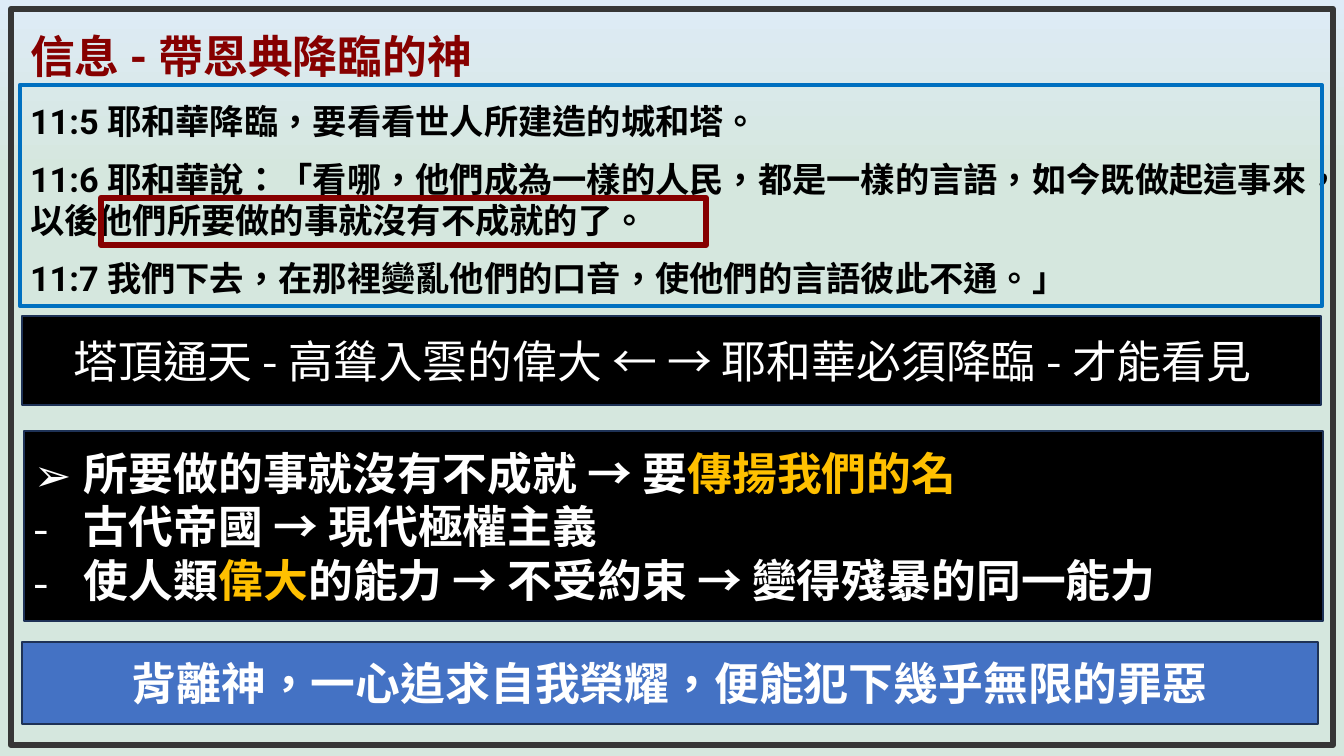
from lxml.etree import SubElement
from pptx import Presentation
from pptx.dml.color import RGBColor
from pptx.enum.shapes import MSO_SHAPE
from pptx.enum.text import MSO_ANCHOR, MSO_AUTO_SIZE, PP_ALIGN
from pptx.oxml.ns import qn
from pptx.util import Emu, Pt

CJK, LATIN = "Noto Sans CJK SC", "Roboto"
WHITE, BLACK, GOLD, MAROON = "FFFFFF", "000000", "FFC000", "860000"
BLUE, EDGE = "4472C4", "1E3256"
TITLE = "信息 - 帶恩典降臨的神"
VERSES = [
    "11:5 耶和華降臨，要看看世人所建造的城和塔。",
    "11:6 耶和華說：「看哪，他們成為一樣的人民，都是一樣的言語，如今既做起這事來，以後他們所要做的事就沒有不成就的了。",
    "11:7 我們下去，在那裡變亂他們的口音，使他們的言語彼此不通。」",
]
CONTRAST = "塔頂通天 - 高聳入雲的偉大 ← → 耶和華必須降臨 - 才能看見"
POINTS = [
    ("➢", [("所要做的事就沒有不成就 → 要", WHITE), ("傳揚我們的名", GOLD)]),
    ("-", [("古代帝國 → 現代極權主義", WHITE)]),
    ("-", [("使人類", WHITE), ("偉大", GOLD),
           ("的能力 → 不受約束 → 變得殘暴的同一能力", WHITE)]),
]
CONCLUSION = "背離神，一心追求自我榮耀，便能犯下幾乎無限的罪惡"


def px(length):
    return Emu(round(length * 914400 / 100.8))


def color(value):
    return RGBColor.from_string(value)


def place(shape, left, top, width, height):
    shape.left, shape.top = px(left), px(top)
    shape.width, shape.height = px(width), px(height)


def add_box(slide, box, line, weight, fill=None):
    shape = slide.shapes.add_shape(MSO_SHAPE.RECTANGLE, *map(px, box))
    shape.shadow.inherit = False
    if fill:
        shape.fill.solid()
        shape.fill.fore_color.rgb = color(fill)
    else:
        shape.fill.background()
    shape.line.color.rgb = color(line)
    shape.line.width = Pt(weight)
    return shape


def write(shape, paragraphs, size=32, font=CJK, bold=True, align=PP_ALIGN.LEFT,
          anchor=MSO_ANCHOR.MIDDLE, gap=0):
    frame = shape.text_frame
    frame.word_wrap = True
    frame.auto_size = MSO_AUTO_SIZE.NONE
    frame.vertical_anchor = anchor
    for index, (bullet, runs) in enumerate(paragraphs):
        paragraph = frame.paragraphs[0] if index == 0 else frame.add_paragraph()
        properties = paragraph._p.get_or_add_pPr()
        indent = px(50) if bullet else 0
        properties.set("marL", str(indent))
        properties.set("indent", str(-indent))
        if bullet:
            SubElement(properties, qn("a:buFont")).set("typeface", CJK)
            SubElement(properties, qn("a:buChar")).set("char", bullet)
        else:
            SubElement(properties, qn("a:buNone"))
        paragraph.alignment = align
        paragraph.line_spacing = 1.0
        paragraph.space_before = Pt(gap if index else 0)
        paragraph.space_after = Pt(0)
        for text, tint in runs:
            run = paragraph.add_run()
            run.text = text
            run.font.size = Pt(size)
            run.font.bold = bold
            run.font.name = font
            run.font.color.rgb = color(tint)
            run_properties = run._r.get_or_add_rPr()
            run_properties.set("lang", "zh-TW")
            SubElement(run_properties, qn("a:ea")).set("typeface", CJK)


def plain(text, tint):
    return None, [(text, tint)]


def main():
    presentation = Presentation()
    presentation.slide_width, presentation.slide_height = px(1344), px(756)
    slide = presentation.slides.add_slide(presentation.slide_layouts[1])

    background = slide.background.fill
    background.gradient()
    background.gradient_angle = 270
    for stop, (position, tint) in zip(background.gradient_stops,
                                      [(0, "DEEBF7"), (0.23, "D5E7DE")]):
        stop.position = position
        stop.color.rgb = color(tint)

    title, body = slide.shapes.title, slide.placeholders[1]
    place(title, 20, 21, 1299, 70)
    write(title, [plain(TITLE, MAROON)], font=LATIN)
    place(body, 20, 95, 1299, 211)
    write(body, [plain(verse, BLACK) for verse in VERSES], size=24.5, font=LATIN,
          anchor=MSO_ANCHOR.TOP, gap=12)

    add_box(slide, (11, 9, 1322, 736), "363636", 4.5)
    add_box(slide, (20, 85, 1302, 221), "0070C0", 3)
    contrast = add_box(slide, (22, 316, 1299, 89), EDGE, 1, BLACK)
    contrast.text_frame.margin_right = px(28)
    write(contrast, [plain(CONTRAST, WHITE)], bold=False, align=PP_ALIGN.CENTER)
    conclusion = add_box(slide, (22, 642, 1296, 82), EDGE, 1, BLUE)
    write(conclusion, [plain(CONCLUSION, WHITE)], align=PP_ALIGN.CENTER)
    points = add_box(slide, (24, 431, 1299, 190), EDGE, 1, BLACK)
    write(points, POINTS)
    add_box(slide, (101, 198, 605, 47), MAROON, 4.5)

    presentation.save("out.pptx")


if __name__ == "__main__":
    main()
